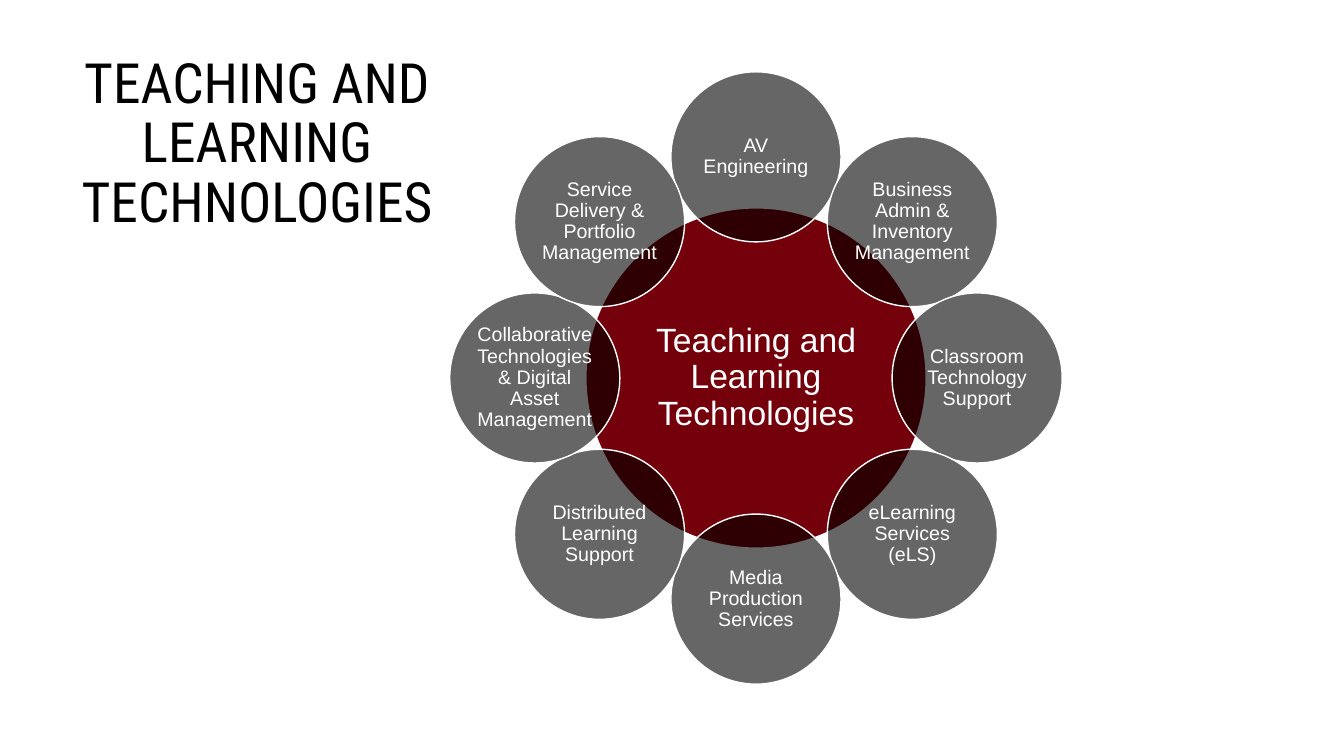
import math
from dataclasses import dataclass

from lxml import etree
from pptx import Presentation
from pptx import util as u
from pptx.dml.color import RGBColor
from pptx.enum import shapes, text
from pptx.oxml import ns
from pptx.shapes.autoshape import Shape
from pptx.shapes.group import GroupShape
from pptx.text.text import TextFrame

SLIDE_WIDTH, SLIDE_HEIGHT = u.Inches(13.33), u.Inches(7.5)
COLUMN, ROW = SLIDE_WIDTH / 24, SLIDE_HEIGHT / 12


@dataclass(frozen=True)
class Theme:
    garnet: str = "73000A"
    black: str = "000000"
    white: str = "FFFFFF"
    title_font: str = "Roboto Condensed"
    body_font: str = "Arial"
    title_size: float = 39.6
    hub_size: float = 24
    bubble_size: float = 14
    line_spacing: float = 0.9
    bubble_opacity: int = 60


@dataclass(frozen=True)
class Circle:
    """A labelled circle; its centre is in columns and rows, its diameter in rows."""
    label: str
    column: float
    row: float
    diameter: float
    fill: str
    opacity: int
    size: float
    inset: float


THEME = Theme()
HUB = Circle("Teaching and Learning Technologies", 13.5, 6, 5.4,
             THEME.garnet, 100, THEME.hub_size, 0.03)
BUBBLE_DIAMETER = HUB.diameter / 2
ORBIT_RADIUS = HUB.diameter * 0.65
SERVICES = (
    "AV Engineering",
    "Business Admin & Inventory Management",
    "Classroom Technology Support",
    "eLearning Services (eLS)",
    "Media Production Services",
    "Distributed Learning Support",
    "Collaborative Technologies & Digital Asset Management",
    "Service Delivery & Portfolio Management",
)


def set_all(target: object, values: dict) -> None:
    for name, value in values.items():
        setattr(target, name, value)


def write(frame: TextFrame, label: str, font: str, size: float, color: str, inset: float) -> None:
    """Put one centred, wrapped paragraph into the frame."""
    margins = {f"margin_{side}": u.Inches(inset) for side in ("left", "right")}
    margins |= {f"margin_{side}": u.Inches(min(inset, 0.05)) for side in ("top", "bottom")}
    set_all(frame, margins | {"text": label, "word_wrap": True,
                              "auto_size": text.MSO_AUTO_SIZE.NONE,
                              "vertical_anchor": text.MSO_ANCHOR.MIDDLE})
    paragraph = frame.paragraphs[0]
    set_all(paragraph, {"alignment": text.PP_ALIGN.CENTER,
                        "line_spacing": THEME.line_spacing})
    run_font = paragraph.runs[0].font
    set_all(run_font, {"name": font, "size": u.Pt(size)})
    run_font.color.rgb = RGBColor.from_string(color)


def set_opacity(shape: Shape, percent: int) -> None:
    color = shape.fill._xPr.find(ns.qn("a:solidFill")).find(ns.qn("a:srgbClr"))
    etree.SubElement(color, ns.qn("a:alpha")).set("val", str(percent * 1000))


def draw_circle(group: GroupShape, circle: Circle) -> None:
    diameter = circle.diameter * ROW
    left = circle.column * COLUMN - diameter / 2
    top = circle.row * ROW - diameter / 2
    shape = group.shapes.add_shape(shapes.MSO_SHAPE.OVAL, round(left), round(top),
                                   round(diameter), round(diameter))
    shape.shadow.inherit = False
    shape.fill.solid()
    shape.fill.fore_color.rgb = RGBColor.from_string(circle.fill)
    if circle.opacity < 100:
        set_opacity(shape, circle.opacity)
    shape.line.color.rgb = RGBColor.from_string(THEME.white)
    shape.line.width = u.Pt(1)
    write(shape.text_frame, circle.label, THEME.body_font, circle.size,
          THEME.white, circle.inset)


def orbiting_bubbles() -> list[Circle]:
    """Space the services evenly around the hub, clockwise from the top."""
    bubbles = []
    for index, service in enumerate(SERVICES):
        angle = math.tau * index / len(SERVICES)
        bubbles.append(Circle(
            service,
            HUB.column + ORBIT_RADIUS * math.sin(angle) * ROW / COLUMN,
            HUB.row - ORBIT_RADIUS * math.cos(angle),
            BUBBLE_DIAMETER, THEME.black, THEME.bubble_opacity, THEME.bubble_size, 0.02))
    return bubbles


def main() -> None:
    presentation = Presentation()
    set_all(presentation, {"slide_width": SLIDE_WIDTH, "slide_height": SLIDE_HEIGHT})
    slide = presentation.slides.add_slide(presentation.slide_layouts.get_by_name("Title Only"))

    title = slide.shapes.title
    set_all(title, {"left": round(1.08 * COLUMN), "top": round(1.14 * ROW),
                    "width": round(7.02 * COLUMN), "height": round(2.32 * ROW)})
    write(title.text_frame, "TEACHING AND LEARNING TECHNOLOGIES", THEME.title_font,
          THEME.title_size, THEME.black, 0.1)

    diagram = slide.shapes.add_group_shape()
    for circle in (HUB, *orbiting_bubbles()):
        draw_circle(diagram, circle)

    presentation.save("out.pptx")


if __name__ == "__main__":
    main()
